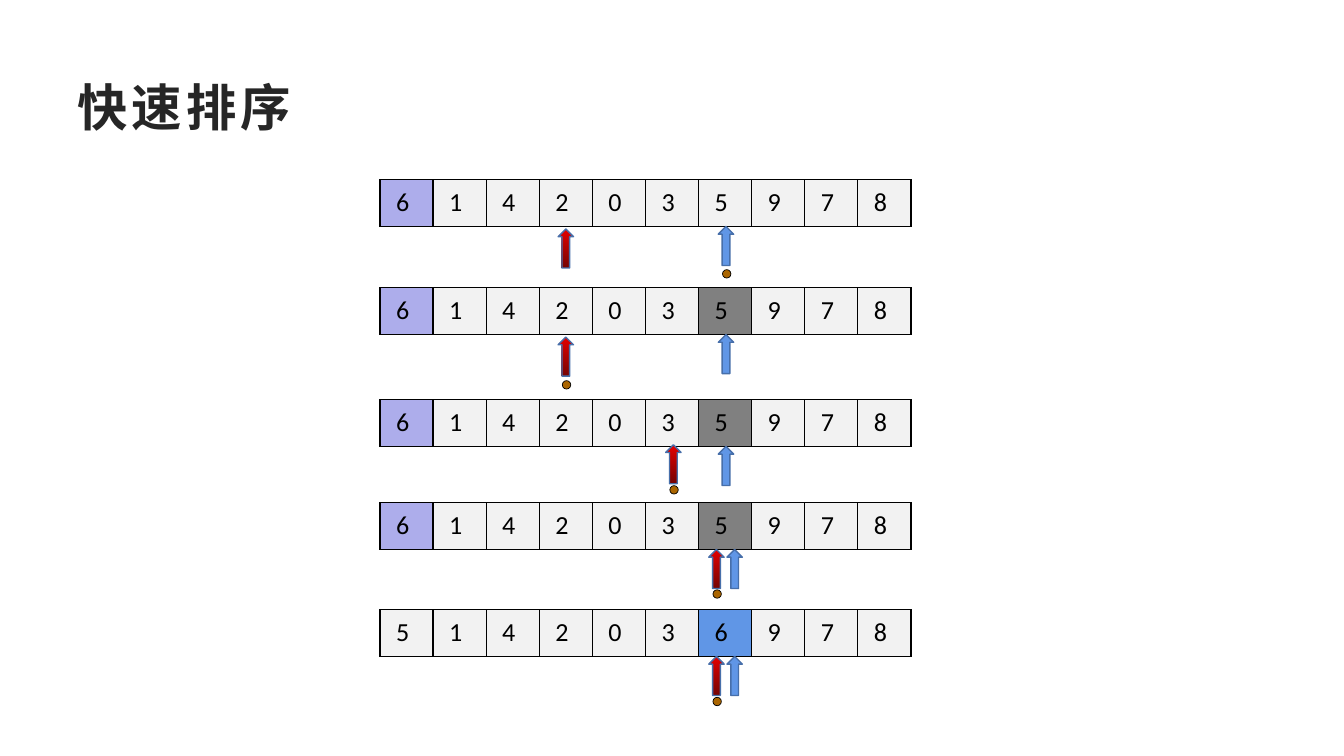
from lxml.etree import SubElement
from pptx import Presentation
from pptx.dml.color import RGBColor
from pptx.enum.shapes import MSO_SHAPE as Preset
from pptx.enum.text import MSO_ANCHOR as Anchor
from pptx.oxml import parse_xml
from pptx.oxml.ns import nsdecls
from pptx.util import Pt

INK = RGBColor(0x26, 0x26, 0x26)
BLACK = RGBColor(0, 0, 0)
PALE = RGBColor(0xF2, 0xF2, 0xF2)
LILAC = RGBColor(0xAD, 0xAD, 0xEB)
GRAY = RGBColor(0x80, 0x80, 0x80)
BLUE = RGBColor(0x60, 0x96, 0xE6)
BLUE_EDGE = RGBColor(0x47, 0x6F, 0xAA)
RED = RGBColor(0xE3, 0, 0)
DARK_RED = RGBColor(0x76, 0x03, 0x03)
BROWN = RGBColor(0xAA, 0x65, 0)

ARRAY_LEFT, CELL_WIDTH, ROW_HEIGHT = 271.4, 37.95, 33.1
ARROW_WIDTH, ARROW_HEIGHT = 11, 27.9
DOT_SIZE = 6


class SortSlide:
    title_font, number_font = "Arial", "Calibri"
    title_size, number_size = Pt(36), Pt(18.6)

    def __init__(self, slide):
        self.slide = slide

    def title(self, text, left, top, width, height):
        frame = self.slide.shapes.add_textbox(
            Pt(left), Pt(top), Pt(width), Pt(height)).text_frame
        frame.word_wrap = True
        frame.vertical_anchor = Anchor.MIDDLE
        heading = frame.paragraphs[0]
        run = heading.add_run()
        run.text = text
        run.font._element.set("spc", "300")
        font = heading.font
        font.name, font.size, font.bold = self.title_font, self.title_size, True
        font.color.rgb = INK

    def array(self, numbers, top, fills):
        """Draw one row of numbers; fills maps a cell index to its highlight."""
        table = self.slide.shapes.add_table(
            1, len(numbers), Pt(ARRAY_LEFT), Pt(top),
            Pt(CELL_WIDTH * len(numbers)), Pt(ROW_HEIGHT)).table
        table.first_row = table.horz_banding = False
        for index, number in enumerate(numbers):
            table.columns[index].width = Pt(CELL_WIDTH)
            cell = table.cell(0, index)
            cell.margin_left = Pt(11.5)
            cell.margin_right = cell.margin_top = cell.margin_bottom = 0
            cell.vertical_anchor = Anchor.MIDDLE
            cell.text = number
            font = cell.text_frame.paragraphs[0].font
            font.name, font.size = self.number_font, self.number_size
            font.color.rgb = BLACK
            cell.fill.solid()
            cell.fill.fore_color.rgb = fills.get(index, PALE)
            self.borders(cell)

    def borders(self, cell):
        properties = cell._tc.get_or_add_tcPr()
        widths = {"lnL": 1, "lnR": 1, "lnT": 0.25, "lnB": 0.25}
        for position, (side, width) in enumerate(widths.items()):
            line = parse_xml(f'<a:{side} {nsdecls("a")} w="{Pt(width)}"/>')
            solid = SubElement(line, line.tag.replace(side, "solidFill"))
            color = SubElement(solid, line.tag.replace(side, "srgbClr"))
            color.set("val", str(BLACK))
            properties.insert(position, line)

    def marker(self, preset, left, top, width, height, fill, edge, edge_width):
        """Draw a preset shape; a pair of fill colours is a downward gradient."""
        shape = self.slide.shapes.add_shape(
            preset, Pt(left), Pt(top), Pt(width), Pt(height))
        shape.shadow.inherit = False
        if isinstance(fill, RGBColor):
            shape.fill.solid()
            shape.fill.fore_color.rgb = fill
        else:
            shape.fill.gradient()
            shape.fill.gradient_angle = 270
            for stop, color in zip(shape.fill.gradient_stops, fill):
                stop.color.rgb = color
        shape.line.color.rgb = edge
        shape.line.width = Pt(edge_width)

    def arrow(self, center, top, fill):
        self.marker(Preset.UP_ARROW, center - ARROW_WIDTH / 2, top,
                    ARROW_WIDTH, ARROW_HEIGHT, fill, BLUE_EDGE, 1)

    def dot(self, center, top):
        self.marker(Preset.OVAL, center - DOT_SIZE / 2, top,
                    DOT_SIZE, DOT_SIZE, BROWN, BLACK, 0.5)


def main():
    deck = Presentation()
    deck.slide_width, deck.slide_height = Pt(960), Pt(540)
    page = SortSlide(deck.slides.add_slide(deck.slide_layouts[6]))
    page.title("快速排序", 48, 48, 381.6, 55.4)

    start, swapped = "6142035978", "5142036978"
    pivot, stopped = {0: LILAC}, {0: LILAC, 6: GRAY}
    # numbers, top, fills, red (center, drop), blue center, dot (center, drop)
    steps = [
        (start, 128.2, pivot, (404.2, 35.4), 518.6, (519.1, 64.4)),
        (start, 205.4, stopped, (404.2, 35.4), 518.6, (404.7, 66.5)),
        (start, 285.3, stopped, (481, 32.4), 518.6, (481.5, 61.6)),
        (start, 358.9, stopped, (511.8, 33.6), 524.8, (512.3, 62.4)),
        (swapped, 435.3, {6: BLUE}, (511.8, 33.6), 524.8, (512.3, 62.8)),
    ]
    for numbers, top, fills, red, blue_center, dot in steps:
        page.array(numbers, top, fills)
        page.arrow(blue_center, top + 33.6, BLUE)
        page.arrow(red[0], top + red[1], (RED, DARK_RED))
        page.dot(dot[0], top + dot[1])

    deck.save("out.pptx")


if __name__ == "__main__":
    main()
